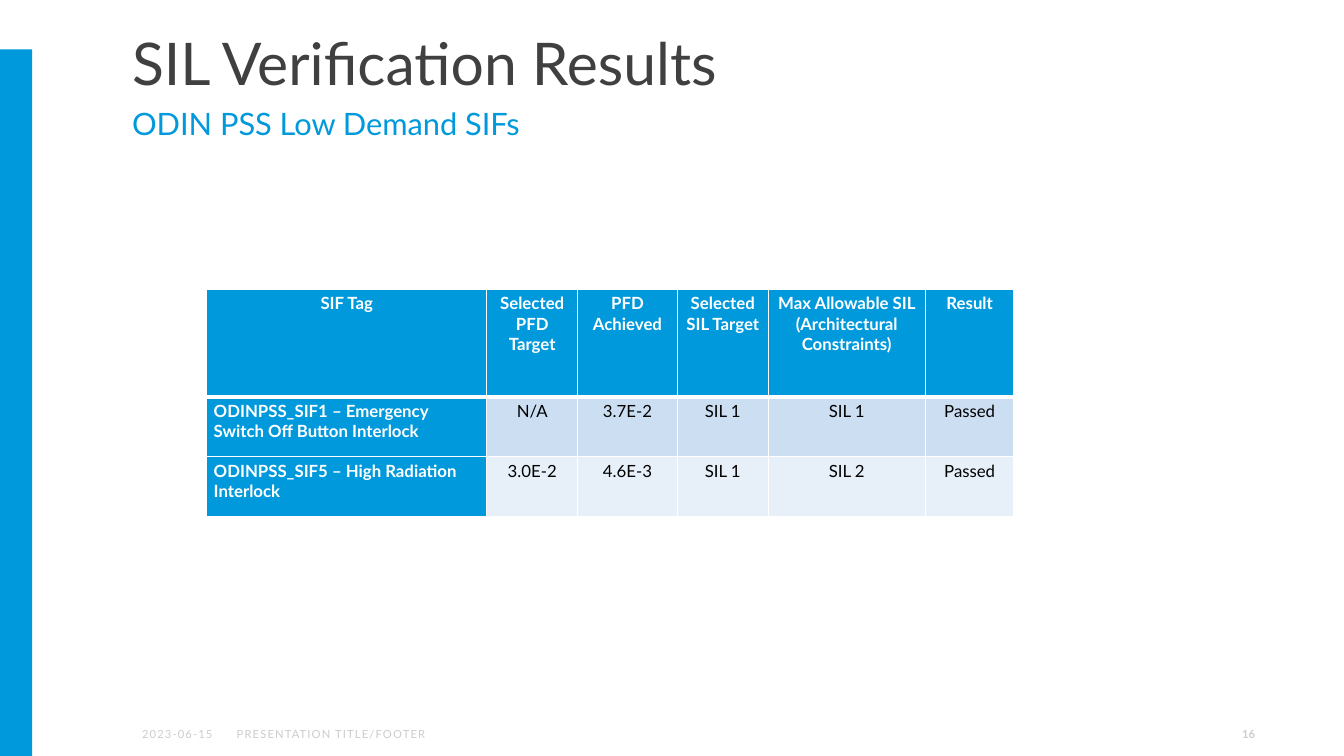
import dataclasses

import lxml.etree
import pptx
import pptx.dml.color
import pptx.enum.shapes
import pptx.enum.text
import pptx.oxml.ns
import pptx.util

ALIGN = pptx.enum.text.PP_ALIGN
ANCHOR = pptx.enum.text.MSO_ANCHOR


@dataclasses.dataclass(frozen=True)
class Theme:
    font: str = "Lato"
    blue: str = "0099DC"
    dark: str = "404040"
    grey: str = "CCCCCC"
    white: str = "FFFFFF"
    black: str = "000000"
    bands: tuple = ("CCDEF2", "E7EFF9")
    head: float = 42
    sub: float = 22
    cell: float = 12
    foot: float = 8


THEME = Theme()
WIDE, HIGH = pptx.util.Inches(13.33), pptx.util.Inches(7.5)

# Table content and its grid: columns and rows in percent of the slide
COLS = (20.85, 6.75, 7.43, 6.75, 11.7, 6.6)
ROWS = (14.27, 7.87, 7.87)
DATA = (
    ("SIF Tag", "Selected PFD Target", "PFD Achieved", "Selected SIL Target",
     "Max Allowable SIL (Architectural Constraints)", "Result"),
    ("ODINPSS_SIF1 – Emergency Switch Off Button Interlock",
     "N/A", "3.7E-2", "SIL 1", "SIL 1", "Passed"),
    ("ODINPSS_SIF5 – High Radiation Interlock",
     "3.0E-2", "4.6E-3", "SIL 1", "SIL 2", "Passed"),
)


def across(share):
    return round(WIDE * share / 100)


def down(share):
    return round(HIGH * share / 100)


def place(box):
    """Turn a box in percent of the slide into lengths."""
    left, top, width, height = box
    return across(left), down(top), across(width), down(height)


def color(code):
    return pptx.dml.color.RGBColor.from_string(code)


def write(para, text, size, code, bold=False, space=0):
    run = para.add_run()
    run.text = text
    font = run.font
    font.name, font.size, font.bold = THEME.font, pptx.util.Pt(size), bold
    font.color.rgb = color(code)
    if space:
        font._element.set("spc", str(round(space * 100)))


def inset(item, left, top, right, base):
    item.margin_left, item.margin_top = map(pptx.util.Inches, (left, top))
    item.margin_right, item.margin_bottom = map(pptx.util.Inches, (right, base))


def fill_holder(shape, box, text, size, code, top, base):
    shape.left, shape.top, shape.width, shape.height = place(box)
    frame = shape.text_frame
    frame.auto_size = pptx.enum.text.MSO_AUTO_SIZE.NONE
    frame.vertical_anchor = ANCHOR.TOP
    inset(frame, 0.1, top, 0.1, base)
    para = frame.paragraphs[0]
    para.alignment, para.space_before = ALIGN.LEFT, pptx.util.Pt(0)
    write(para, text, size, code)
    return para


def heading(slide, box):
    """Title above, subtitle below, in one box."""
    left, top, width, height = box
    para = fill_holder(slide.shapes.title, (left, top, width, height * 0.56),
                       "SIL Verification Results", THEME.head, THEME.dark, 0.05, 0.02)
    para.line_spacing = 0.9
    para = fill_holder(slide.placeholders[1],
                       (left, top + height * 0.57, width, height * 0.43),
                       "ODIN PSS Low Demand SIFs", THEME.sub, THEME.blue, 0.02, 0.05)
    props = para._p.get_or_add_pPr()
    props.set("marL", "0")
    props.set("indent", "0")
    lxml.etree.SubElement(props, pptx.oxml.ns.qn("a:buNone"))


def side_bar(slide, box):
    bar = slide.shapes.add_shape(pptx.enum.shapes.MSO_SHAPE.RECTANGLE, *place(box))
    bar.shadow.inherit = False
    bar.fill.solid()
    bar.fill.fore_color.rgb = color(THEME.blue)
    bar.line.fill.background()


def footer(slide, box):
    """Date and footer at the left, page number at the right."""
    left, top, width, height = box
    parts = (
        ("2023-06-15", 0, 7.05, ALIGN.LEFT, False, 0.8),
        ("PRESENTATION TITLE/FOOTER", 7.05, 35.4, ALIGN.LEFT, False, 0.8),
        ("16", width - 22.5, 22.5, ALIGN.RIGHT, True, 0),
    )
    for text, shift, span, align, bold, space in parts:
        frame = slide.shapes.add_textbox(
            *place((left + shift, top, span, height))).text_frame
        frame.word_wrap = True
        frame.vertical_anchor = ANCHOR.MIDDLE
        para = frame.paragraphs[0]
        para.alignment = align
        write(para, text, THEME.foot, THEME.grey, bold, space)


def border(cell, widths):
    """Draw the white edges; they stand ahead of the fill in the cell."""
    name = pptx.oxml.ns.qn
    props = cell._tc.get_or_add_tcPr()
    for spot, (side, width) in enumerate(widths.items()):
        line = lxml.etree.Element(name("a:ln" + side), w=str(pptx.util.Pt(width)))
        solid = lxml.etree.SubElement(line, name("a:solidFill"))
        lxml.etree.SubElement(solid, name("a:srgbClr"), val=THEME.white)
        props.insert(spot, line)


def results(slide, left, top):
    box = place((left, top, sum(COLS), sum(ROWS)))
    table = slide.shapes.add_table(len(ROWS), len(COLS), *box).table
    table.first_col = True
    for col, share in zip(table.columns, COLS):
        col.width = across(share)
    for row, share in zip(table.rows, ROWS):
        row.height = down(share)
    for i, line in enumerate(DATA):
        for j, text in enumerate(line):
            cell = table.cell(i, j)
            strong = i == 0 or j == 0
            inset(cell, 0.07, 0.04, 0.07, 0.04)
            cell.fill.solid()
            cell.fill.fore_color.rgb = color(
                THEME.blue if strong else THEME.bands[i - 1])
            border(cell, {"L": 1, "R": 1, "T": 3 if i == 1 else 1,
                          "B": 3 if i == 0 else 1})
            para = cell.text_frame.paragraphs[0]
            para.alignment = ALIGN.LEFT if i and not j else ALIGN.CENTER
            para.space_after = pptx.util.Pt(6)
            write(para, text, THEME.cell,
                  THEME.white if strong else THEME.black, strong)


def main():
    deck = pptx.Presentation()
    deck.slide_width, deck.slide_height = WIDE, HIGH
    slide = deck.slides.add_slide(deck.slide_layouts[1])
    side_bar(slide, (0, 6.53, 2.4, 93.47))
    heading(slide, (9.08, 3.87, 76.8, 17.07))
    results(slide, 15.38, 38.27)
    footer(slide, (9.83, 94.4, 84.3, 5.33))
    deck.save("out.pptx")


if __name__ == "__main__":
    main()
